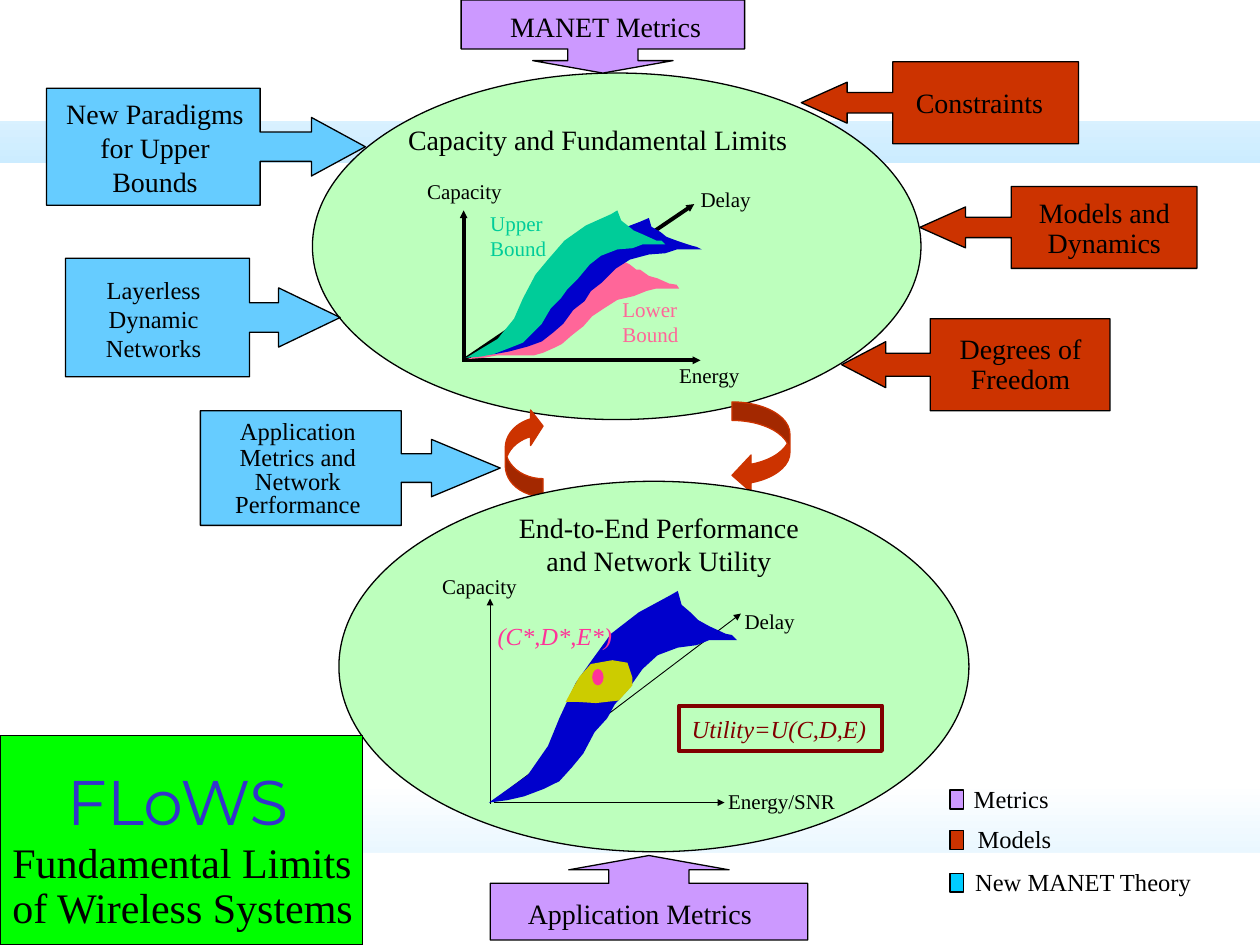
from lxml.etree import SubElement
from pptx import Presentation
from pptx.dml.color import RGBColor
from pptx.enum.shapes import MSO_CONNECTOR as Link, MSO_SHAPE as Kind
from pptx.enum.text import MSO_AUTO_SIZE as Auto, PP_ALIGN as Align
from pptx.oxml.ns import qn
from pptx.util import Inches, Pt

BLACK = RGBColor(0x00, 0x00, 0x00)
WHITE = RGBColor(0xFF, 0xFF, 0xFF)
SKY = RGBColor(0xCC, 0xEC, 0xFF)
MINT = RGBColor(0xBD, 0xFF, 0xBD)
GREEN = RGBColor(0x00, 0xFF, 0x00)
TEAL = RGBColor(0x00, 0xCC, 0x99)
NAVY = RGBColor(0x00, 0x00, 0xCC)
INDIGO = RGBColor(0x33, 0x33, 0xCC)
BLUE = RGBColor(0x66, 0xCC, 0xFF)
CYAN = RGBColor(0x00, 0xCC, 0xFF)
ROSE = RGBColor(0xFF, 0x66, 0x99)
PINK = RGBColor(0xFF, 0x33, 0x99)
GOLD = RGBColor(0xCC, 0xCC, 0x00)
RED = RGBColor(0xCC, 0x33, 0x00)
WINE = RGBColor(0x80, 0x00, 0x00)
LILAC = RGBColor(0xCC, 0x99, 0xFF)

deck = Presentation()
deck.slide_width, deck.slide_height = Inches(10), Inches(7.5)
slide = deck.slides.add_slide(deck.slide_layouts[6])
shapes = slide.shapes
CELL = deck.slide_width // 1000  # grid of 1000 columns by 750 rows


def paint(shape, fill, line=None, width=0.75):
    shape.shadow.inherit = False
    if fill is None:
        shape.fill.background()
    else:
        shape.fill.solid()
        shape.fill.fore_color.rgb = fill
    if line is None:
        shape.line.fill.background()
    else:
        shape.line.color.rgb = line
        shape.line.width = Pt(width)


def write(shape, lines, size, color=BLACK, align=Align.LEFT, gaps=(),
          inset=True, italic=False, font="Times New Roman"):
    """Fill a shape with lines; gaps holds the line spacing of each."""
    frame = shape.text_frame
    frame.word_wrap = False
    frame.auto_size = Auto.SHAPE_TO_FIT_TEXT
    if not inset:
        frame.margin_left = frame.margin_right = 0
        frame.margin_top = frame.margin_bottom = 0
    for i, line in enumerate(lines):
        para = frame.paragraphs[0] if i == 0 else frame.add_paragraph()
        para.alignment = align
        if gaps:
            para.line_spacing = gaps[i]
        run = para.add_run()
        run.text = line
        run.font.name, run.font.size = font, Pt(size)
        run.font.italic = italic
        run.font.color.rgb = color


# Background bands, each partly covered by white
for top, lid, tall in ((0, 0, 96), (621, 677, 73)):
    band = shapes.add_shape(Kind.RECTANGLE, 0, top * CELL, 1000 * CELL, 129 * CELL)
    paint(band, WHITE)
    band.fill.gradient()
    band.fill.gradient_angle = 270
    for stop, color, spot in zip(band.fill.gradient_stops, (WHITE, SKY), (0, 1)):
        stop.color.rgb, stop.position = color, spot
    cover = shapes.add_shape(Kind.RECTANGLE, 0, lid * CELL, 1000 * CELL, tall * CELL)
    paint(cover, WHITE)

# Ovals and the loop between them
for kind, box, fill, line, adjust, turn in (
    (Kind.OVAL, (248, 58, 483, 275), MINT, BLACK, (), 0),
    (Kind.CURVED_LEFT_ARROW, (581, 319, 46, 73), RED, RED, (0.32, 0.64, 0.33), 0),
    (Kind.CURVED_LEFT_ARROW, (401, 324, 30, 70), RED, RED, (0.47, 0.94, 0.33), 180),
    (Kind.OVAL, (269, 382, 500, 294), MINT, BLACK, (), 0),
):
    shape = shapes.add_shape(kind, *(n * CELL for n in box))
    for i, share in enumerate(adjust):
        shape.adjustments[i] = share
    shape.rotation = turn
    paint(shape, fill, line)

# Axes of both plots
for x1, y1, x2, y2, width in (
    (368, 286, 368, 167, 2.25),
    (368, 286, 551, 162, 2.25),
    (367, 286, 556, 286, 2.25),
    (389, 638, 389, 475, 0.5),
    (394, 634, 588, 487, 0.5),
    (392, 637, 575, 637, 0.5),
):
    axis = shapes.add_connector(Link.STRAIGHT, x1 * CELL, y1 * CELL, x2 * CELL, y2 * CELL)
    axis.line.color.rgb = BLACK
    axis.line.width = Pt(width)
    tail = SubElement(axis.line._get_or_add_ln(), qn("a:tailEnd"))
    for key, value in (("type", "triangle"), ("w", "sm"), ("len", "sm")):
        tail.set(key, value)
    SubElement(axis._element.spPr, qn("a:effectLst"))

# Surfaces: one outline, stretched to three places
WAVE = [(0, 168), (31, 146), (47, 123), (56, 101), (69, 73), (81, 56), (97, 34),
        (119, 17), (143, 4), (150, 0), (153, 11), (160, 17), (166, 23), (175, 28),
        (188, 34), (193, 35), (197, 39), (188, 39), (175, 39), (165, 43), (150, 45),
        (134, 51), (122, 62), (110, 79), (100, 90), (94, 101), (84, 112), (75, 129),
        (66, 140), (56, 151), (44, 157), (28, 163), (15, 166)]
LOWER = [(371, 285), (398, 275), (411, 265), (419, 256), (430, 243), (441, 236),
         (454, 226), (473, 219), (494, 207), (500, 210), (505, 214), (508, 214),
         (515, 219), (522, 221), (531, 225), (537, 226), (539, 229), (521, 229),
         (513, 231), (503, 235), (490, 238), (479, 245), (470, 251), (463, 259),
         (454, 266), (446, 273), (440, 276), (431, 280), (424, 282), (395, 282),
         (384, 284)]
PATCH = [(449, 557), (457, 557), (473, 558), (491, 556), (502, 544), (502, 538),
         (498, 526), (486, 524), (469, 527), (460, 537), (456, 544)]
areas = [(LOWER, ROSE)]
for left, top, wide, tall, color in (
    (379, 173, 178, 109, NAVY),
    (370, 167, 158, 117, TEAL),
    (388, 469, 197, 168, NAVY),
):
    areas.append(([(left + x * wide / 197, top + y * tall / 168) for x, y in WAVE], color))
areas.append((PATCH, GOLD))
for points, color in areas:
    form = shapes.build_freeform(*points[0], scale=CELL)
    form.add_line_segments(points[1:], close=True)
    paint(form.convert_to_shape(), color)

dot = shapes.add_shape(Kind.OVAL, 470 * CELL, 531 * CELL, 9 * CELL, 13 * CELL)
paint(dot, PINK)
rule = shapes.add_shape(Kind.RECTANGLE, 539 * CELL, 560 * CELL, 161 * CELL, 36 * CELL)
paint(rule, None, WINE, 2.25)
write(rule, ["Utility=U(C,D,E)"], 14, WINE, italic=True)

# Plot labels
for left, top, wide, color, lines in (
    (339, 142, 64, BLACK, ["Capacity"]),
    (556, 148, 41, BLACK, ["Delay"]),
    (539, 288, 52, BLACK, ["Energy"]),
    (389, 167, 49, TEAL, ["Upper", "Bound"]),
    (494, 235, 51, ROSE, ["Lower", "Bound"]),
    (351, 455, 64, BLACK, ["Capacity"]),
    (591, 483, 41, BLACK, ["Delay"]),
    (578, 626, 90, BLACK, ["Energy/SNR"]),
):
    label = shapes.add_textbox(left * CELL, top * CELL, wide * CELL, 20 * len(lines) * CELL)
    write(label, lines, 12, color, inset=False)
point = shapes.add_textbox(385 * CELL, 488 * CELL, 111 * CELL, 33 * CELL)
write(point, ["(C*,D*,E*)"], 14, PINK, italic=True)

# Callouts around the ovals, and the sign at lower left
LEFT, RIGHT = Kind.LEFT_ARROW_CALLOUT, Kind.RIGHT_ARROW_CALLOUT
UP, DOWN = Kind.UP_ARROW_CALLOUT, Kind.DOWN_ARROW_CALLOUT
for kind, box, fill, adjust in (
    (LEFT, (636, 49, 220, 65), RED, (0.25, 0.25, 0.56, 0.67)),
    (LEFT, (668, 253, 213, 73), RED, (0.25, 0.25, 0.48, 0.67)),
    (LEFT, (730, 148, 220, 65), RED, (0.25, 0.25, 0.56, 0.67)),
    (RIGHT, (159, 326, 238, 91), BLUE, (0.25, 0.25, 0.6, 0.67)),
    (RIGHT, (52, 205, 218, 94), BLUE, (0.25, 0.25, 0.52, 0.67)),
    (RIGHT, (37, 70, 253, 93), BLUE, (0.25, 0.25, 0.46, 0.67)),
    (DOWN, (366, 0, 225, 58), LILAC, (0.96, 0.96, 0.17, 0.67)),
    (UP, (389, 679, 252, 67), LILAC, (0.95, 0.95, 0.17, 0.67)),
    (Kind.RECTANGLE, (0, 584, 288, 166), GREEN, ()),
):
    shape = shapes.add_shape(kind, *(n * CELL for n in box))
    for i, share in enumerate(adjust):
        shape.adjustments[i] = share
    paint(shape, fill, BLACK)

MID, SIDE = Align.CENTER, Align.LEFT
for box, size, align, gaps, lines in (
    ((314, 92, 347, 37), 16, SIDE, (), ["Capacity and Fundamental Limits"]),
    ((400, 400, 246, 64), 16, MID, (), ["End-to-End Performance", "and Network Utility"]),
    ((717, 63, 131, 37), 16, SIDE, (), ["Constraints"]),
    ((750, 258, 120, 61), 16, MID, (1, 0.9), ["Degrees of", "Freedom"]),
    ((811, 148, 131, 64), 16, MID, (1.1, 0.9), ["Models and", "Dynamics"]),
    ((175, 325, 123, 95), 14, MID, (1, 0.9, 0.8, 0.8),
     ["Application", "Metrics and", "Network", "Performance"]),
    ((72, 213, 100, 80), 14, MID, (), ["Layerless", "Dynamic", "Networks"]),
    ((27, 72, 192, 90), 16, MID, (), ["New Paradigms", "for Upper", "Bounds"]),
    ((395, 3, 181, 37), 16, SIDE, (), ["MANET Metrics"]),
    ((409, 707, 199, 37), 16, SIDE, (), ["Application Metrics"]),
    ((0, 659, 292, 86), 24, SIDE, (1, 0.9), ["Fundamental Limits", "of Wireless Systems"]),
):
    write(shapes.add_textbox(*(n * CELL for n in box)), lines, size, align=align, gaps=gaps)
title = shapes.add_textbox(26 * CELL, 605 * CELL, 230 * CELL, 62 * CELL)
write(title, ["FLoWS"], 36, INDIGO, MID, inset=False, font="Montserrat")

# Legend
for top, left, wide, color, name in (
    (627, 763, 80, LILAC, "Metrics"),
    (659, 766, 79, RED, "Models"),
    (693, 764, 192, CYAN, "New MANET Theory"),
):
    key = shapes.add_shape(Kind.RECTANGLE, 754 * CELL, top * CELL, 11 * CELL, 15 * CELL)
    paint(key, color, BLACK)
    note = shapes.add_textbox(left * CELL, (top - 10) * CELL, wide * CELL, 33 * CELL)
    write(note, [name], 14)

deck.save("out.pptx")
